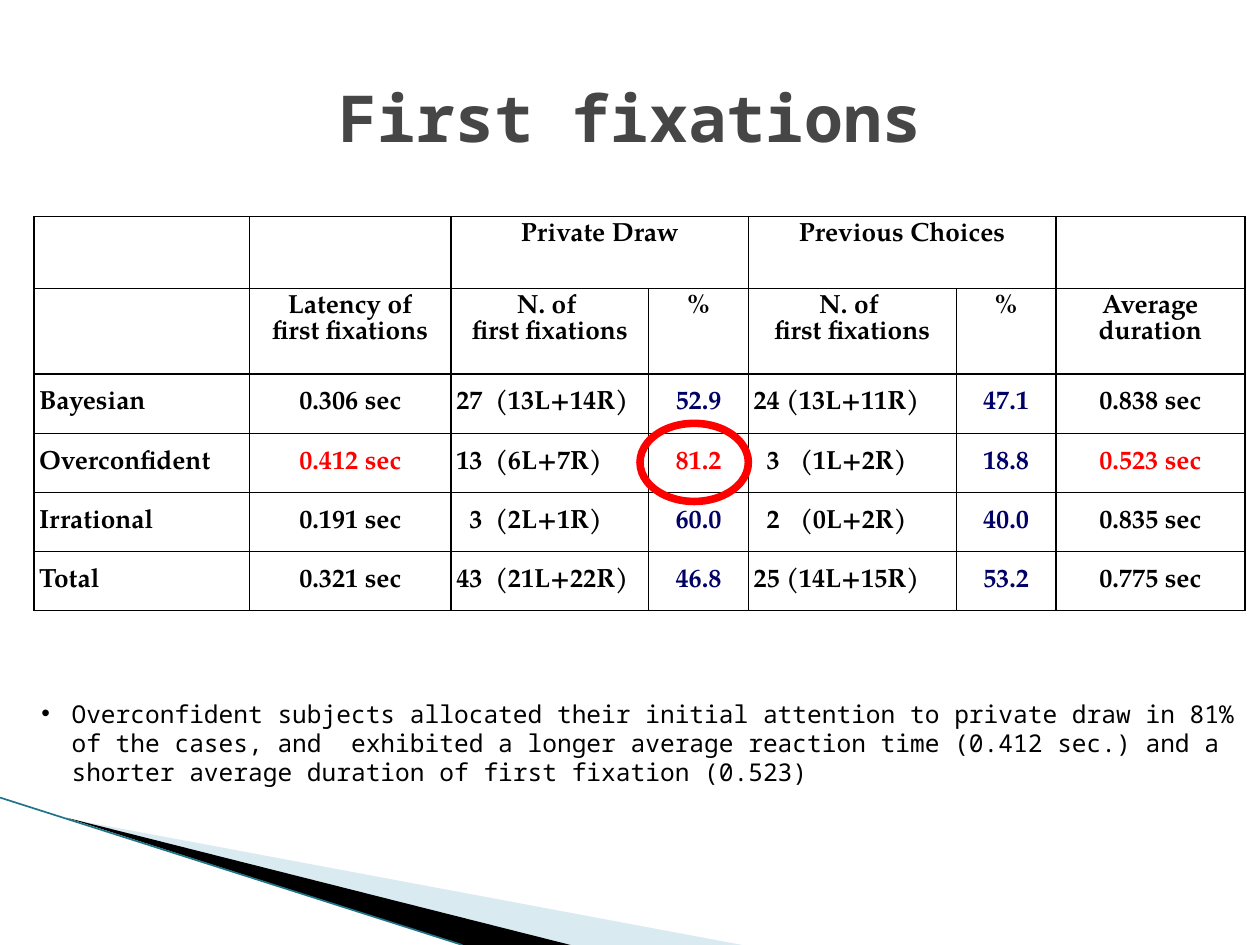
from lxml import etree
from pptx import Presentation
from pptx.dml.color import RGBColor
from pptx.enum.shapes import MSO_CONNECTOR, MSO_SHAPE
from pptx.enum.text import MSO_ANCHOR, PP_ALIGN
from pptx.oxml import parse_xml
from pptx.oxml.ns import nsdecls, qn
from pptx.util import Inches, Pt

BLACK = RGBColor(0x00, 0x00, 0x00)
GRAY = RGBColor(0x46, 0x46, 0x46)
NAVY = RGBColor(0x00, 0x00, 0x66)
RED = RGBColor(0xFF, 0x00, 0x00)
PALE_BLUE = RGBColor(0xA0, 0xCB, 0xDC)
TEAL = RGBColor(0x1F, 0x74, 0x88)
MONO, SERIF = "Noto Sans Mono", "TeX Gyre Pagella"

# Content
TITLE = "First fixations"
NOTE = ("Overconfident subjects allocated their initial attention to private draw "
        "in 81% of the cases, and  exhibited a longer average reaction time "
        "(0.412 sec.) and a shorter average duration of first fixation (0.523)")
COUNT_HEADER = "N. of \nfirst fixations"
ROWS = [
    ["", "", "Private Draw", "", "Previous Choices", "", ""],
    ["", "Latency of\nfirst fixations", COUNT_HEADER, "%", COUNT_HEADER, "%",
     "Average\nduration"],
    ["Bayesian", "0.306 sec", "\t27\t(13L+14R)", "52.9", "\t24\t(13L+11R)", "47.1", "0.838 sec"],
    ["Overconfident", "0.412 sec", "\t13\t(6L+7R)", "81.2", "\t3\t(1L+2R)", "18.8", "0.523 sec"],
    ["Irrational", "0.191 sec", "\t3\t(2L+1R)", "60.0", "\t2\t(0L+2R)", "40.0", "0.835 sec"],
    ["Total", "0.321 sec", "\t43\t(21L+22R)", "46.8", "\t25\t(14L+15R)", "53.2", "0.775 sec"],
]
COLUMN_WIDTHS = [1.71, 1.6, 1.57, 0.79, 1.65, 0.79, 1.5]
ROW_HEIGHTS = [0.57, 0.68] + [0.47] * 4
HEADER_ROWS = 2
COUNT_COLUMNS, PERCENT_COLUMNS = (2, 4), (3, 5)
HIGHLIGHTS = {(3, 1), (3, 3), (3, 6)}
WEDGES = [
    ([(0.55, 6.5), (5.89, 7.5), (4.52, 7.5)], PALE_BLUE, 40),
    ([(0.53, 6.49), (4.53, 7.5), (3.67, 7.5)], BLACK, 100),
]


def apply_format(target, values):
    for name, value in values.items():
        setattr(target, name, value)


def write_run(paragraph, text, color, **values):
    run = paragraph.add_run()
    run.text = text
    apply_format(run.font, values)
    run.font.color.rgb = color


def add_text(slide, left, top, width, height):
    frame = slide.shapes.add_textbox(*map(Inches, (left, top, width, height))).text_frame
    apply_format(frame, {"word_wrap": True, "vertical_anchor": MSO_ANCHOR.MIDDLE})
    return frame.paragraphs[0]


def add_wedge(slide, points, color, opacity):
    corners = [(Inches(x), Inches(y)) for x, y in points]
    builder = slide.shapes.build_freeform(*corners[0])
    builder.add_line_segments(corners[1:], close=True)
    wedge = builder.convert_to_shape()
    wedge.shadow.inherit = False
    wedge.fill.solid()
    wedge.fill.fore_color.rgb = color
    wedge.line.fill.background()
    if opacity < 100:
        color_element = wedge.fill._xPr.find(".//" + qn("a:srgbClr"))
        etree.SubElement(color_element, qn("a:alpha"), val=str(opacity * 1000))


def set_borders(cell, row, column):
    thin = {
        "L": row > 0 and column in PERCENT_COLUMNS,
        "R": row > 0 and column in COUNT_COLUMNS,
        "T": False,
        "B": row == len(ROWS) - 1,
    }
    properties = cell._tc.get_or_add_tcPr()
    for position, (side, is_thin) in enumerate(thin.items()):
        width = Pt(0.75 if is_thin else 1)
        properties.insert(position, parse_xml(
            f'<a:ln{side} {nsdecls("a")} w="{width}"><a:solidFill>'
            f'<a:srgbClr val="{BLACK}"/></a:solidFill></a:ln{side}>'))


def add_count_tabs(paragraph, row, column):
    """Line up the counts on the right and the brackets on the left."""
    if column == 2:
        bracket = 0.31
    else:
        bracket = 0.37 if row in (3, 4) else 0.26
    tabs = etree.SubElement(paragraph._p.get_or_add_pPr(), qn("a:tabLst"))
    for place, alignment in ((0.21, "r"), (bracket, "l")):
        etree.SubElement(tabs, qn("a:tab"), pos=str(Inches(place)), algn=alignment)


def fill_cell(cell, row, column, text):
    cell.fill.background()
    set_borders(cell, row, column)
    is_body = row >= HEADER_ROWS
    if is_body:
        apply_format(cell, {
            "vertical_anchor": MSO_ANCHOR.MIDDLE,
            "margin_left": Inches(0.04), "margin_right": Inches(0.04),
            "margin_top": Inches(0.08), "margin_bottom": Inches(0.08)})
    if not text:
        return
    color = NAVY if is_body and column in PERCENT_COLUMNS else BLACK
    if (row, column) in HIGHLIGHTS:
        color = RED
    is_left = is_body and column in (0, *COUNT_COLUMNS)
    for number, line in enumerate(text.split("\n")):
        frame = cell.text_frame
        paragraph = frame.add_paragraph() if number else frame.paragraphs[0]
        paragraph.alignment = PP_ALIGN.LEFT if is_left else PP_ALIGN.CENTER
        if is_body and column in COUNT_COLUMNS:
            add_count_tabs(paragraph, row, column)
        write_run(paragraph, line, color, name=SERIF, size=Pt(15), bold=True)


def add_fixation_table(slide):
    table = slide.shapes.add_table(
        len(ROWS), len(COLUMN_WIDTHS), Inches(0.27), Inches(1.72),
        Inches(sum(COLUMN_WIDTHS)), Inches(sum(ROW_HEIGHTS))).table
    apply_format(table, {"first_row": False, "horz_banding": False})
    for column, width in zip(table.columns, COLUMN_WIDTHS):
        column.width = Inches(width)
    for row, height in zip(table.rows, ROW_HEIGHTS):
        row.height = Inches(height)
    for column in COUNT_COLUMNS:
        table.cell(0, column).merge(table.cell(0, column + 1))
    for row, texts in enumerate(ROWS):
        for column, text in enumerate(texts):
            fill_cell(table.cell(row, column), row, column, text)


def main():
    presentation = Presentation()
    apply_format(presentation, {"slide_width": Inches(10), "slide_height": Inches(7.5)})
    slide = presentation.slides.add_slide(presentation.slide_layouts[6])

    # Corner decoration
    for wedge in WEDGES:
        add_wedge(slide, *wedge)
    edge = slide.shapes.add_connector(
        MSO_CONNECTOR.STRAIGHT, Inches(0), Inches(6.33), Inches(3.67), Inches(7.5))
    edge.line.color.rgb = TEAL
    edge.line.width = Pt(0.95)
    etree.SubElement(edge._element.spPr, qn("a:effectLst"))

    # Title
    title = add_text(slide, 0.5, 0.3, 9, 1.25)
    title.alignment = PP_ALIGN.CENTER
    write_run(title, TITLE, GRAY, name=MONO, size=Pt(37), bold=True)

    add_fixation_table(slide)

    # Bulleted note
    note = add_text(slide, 0.23, 5.49, 9.77, 0.81)
    properties = note._p.get_or_add_pPr()
    properties.set("marL", str(Inches(0.24)))
    properties.set("indent", str(-Inches(0.24)))
    etree.SubElement(properties, qn("a:buFont"), typeface="Arial")
    etree.SubElement(properties, qn("a:buChar"), char="•")
    write_run(note, NOTE, BLACK, name=MONO, size=Pt(14))

    # Ring around the key percentage
    ring = slide.shapes.add_shape(
        MSO_SHAPE.OVAL, Inches(5.08), Inches(3.36), Inches(0.86), Inches(0.62))
    ring.shadow.inherit = False
    ring.fill.background()
    ring.line.color.rgb = RED
    ring.line.width = Pt(4.33)

    presentation.save("out.pptx")


if __name__ == "__main__":
    main()
